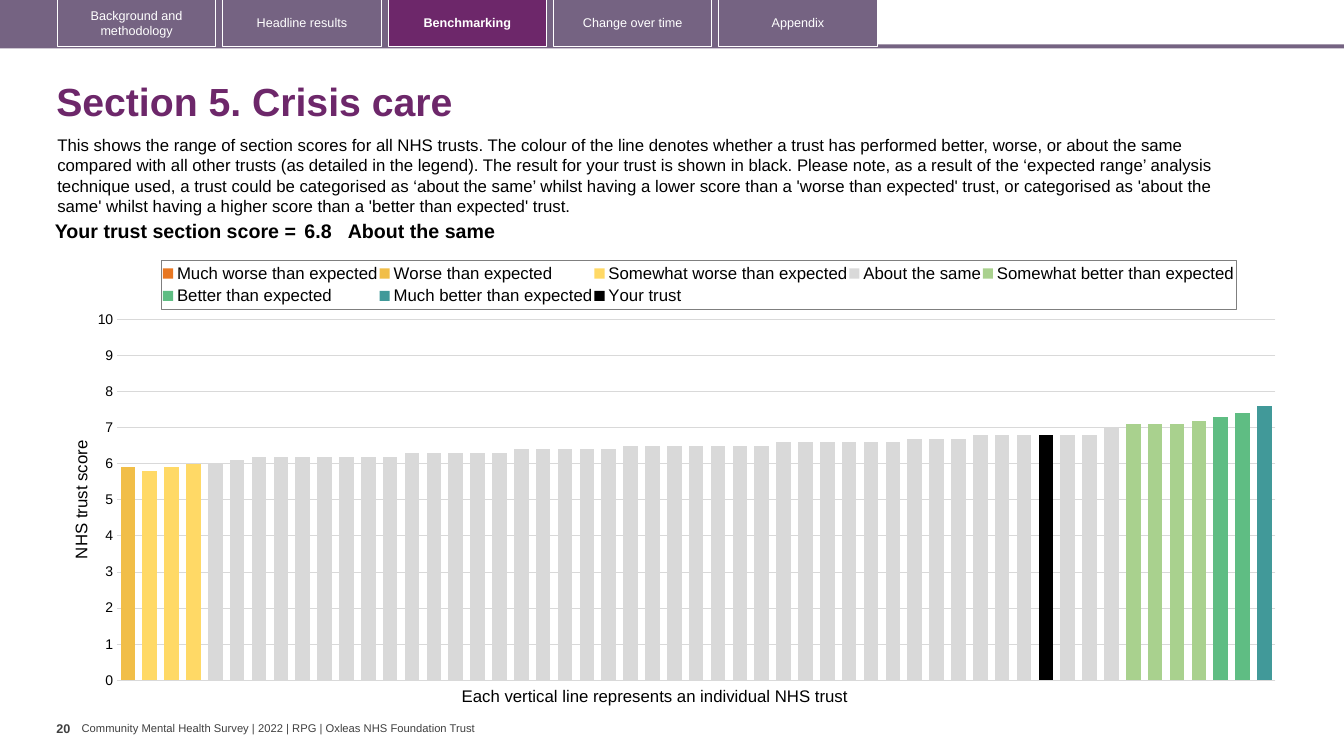
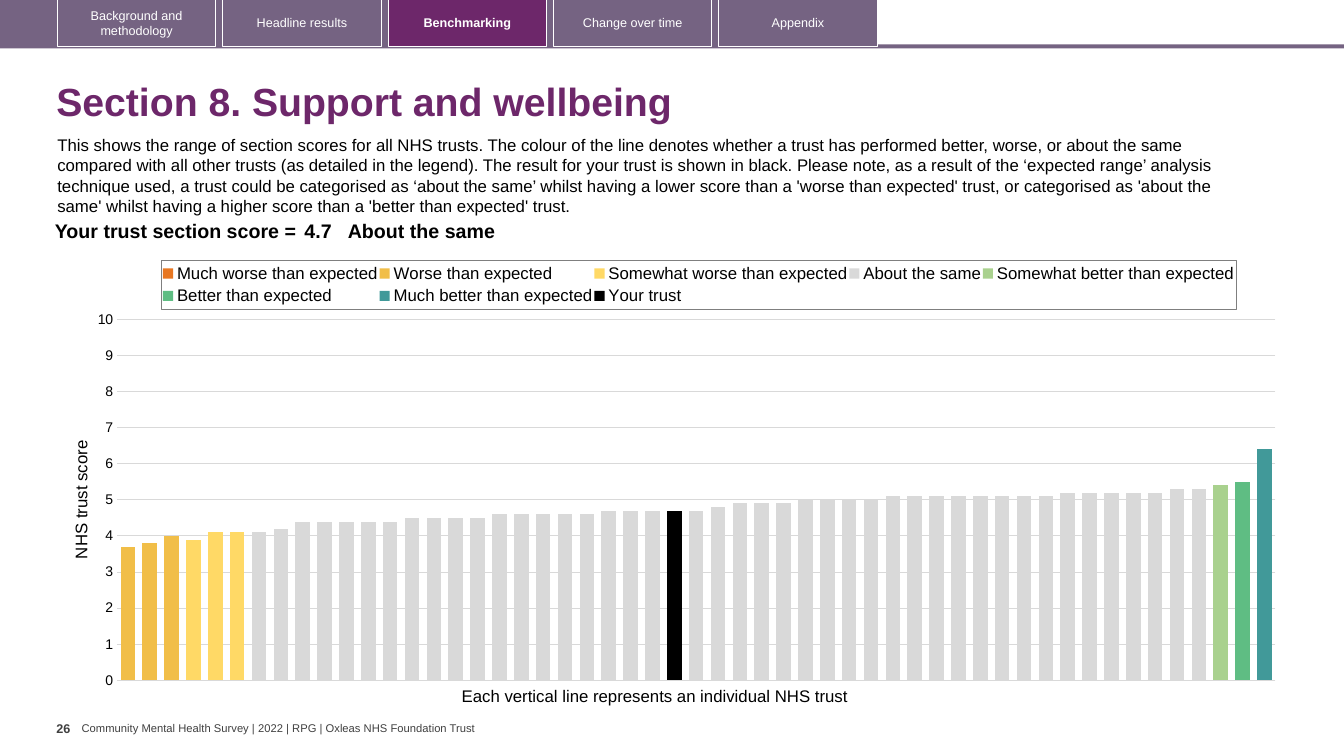
from copy import deepcopy
from dataclasses import dataclass
from typing import Any, NamedTuple, Optional

from pptx import Presentation
from pptx.chart.data import CategoryChartData
from pptx.dml.color import RGBColor
from pptx.enum.chart import XL_CHART_TYPE as ChartType
from pptx.enum.chart import XL_LEGEND_POSITION as LegendPosition
from pptx.enum.chart import XL_TICK_MARK as TickMark
from pptx.enum.shapes import MSO_SHAPE as Preset
from pptx.enum.text import MSO_ANCHOR as Anchor
from pptx.enum.text import PP_ALIGN as Align
from pptx.oxml import parse_xml
from pptx.oxml.ns import nsdecls, qn
from pptx.util import Inches, Pt

PURPLE = RGBColor(0x6D, 0x27, 0x6A)
MAUVE = RGBColor(0x75, 0x63, 0x82)
WHITE = RGBColor(0xFF, 0xFF, 0xFF)
BLACK = RGBColor(0x00, 0x00, 0x00)
CHARCOAL = RGBColor(0x40, 0x40, 0x40)
MID_GREY = RGBColor(0x7F, 0x7F, 0x7F)
LIGHT_GREY = RGBColor(0xD9, 0xD9, 0xD9)
ORANGE = RGBColor(0xE8, 0x77, 0x22)
AMBER = RGBColor(0xF1, 0xBE, 0x48)
YELLOW = RGBColor(0xFF, 0xD9, 0x66)
PALE_GREEN = RGBColor(0xA9, 0xD1, 0x8E)
GREEN = RGBColor(0x5F, 0xBD, 0x83)
TEAL = RGBColor(0x41, 0x99, 0x99)

TITLE_FORMAT = {"name": "Arial", "size": Pt(28), "bold": True}
SCORE_FORMAT = {"name": "Arial", "size": Pt(14), "bold": True}
BODY_FORMAT = {"name": "Arial", "size": Pt(12), "bold": False}
TICK_FORMAT = {"name": "Arial", "size": Pt(10)}
TAB_FORMAT = {"name": "Arial", "size": Pt(9), "bold": False}
CURRENT_TAB_FORMAT = {**TAB_FORMAT, "bold": True}
FOOTER_FORMAT = {"name": "Arial", "size": Pt(8)}

TABS = ("Background and methodology", "Headline results", "Benchmarking",
        "Change over time", "Appendix")
CURRENT_TAB = "Benchmarking"
FOOTER = "Community Mental Health Survey | 2022 | RPG | Oxleas NHS Foundation Trust"
EXPLANATION = (
    "This shows the range of section scores for all NHS trusts. The colour of the line "
    "denotes whether a trust has performed better, worse, or about the same compared with "
    "all other trusts (as detailed in the legend). The result for your trust is shown in "
    "black. Please note, as a result of the ‘expected range’ analysis technique used, a "
    "trust could be categorised as ‘about the same’ whilst having a lower score than a "
    "'worse than expected' trust, or categorised as 'about the same' whilst having a higher "
    "score than a 'better than expected' trust."
)
TRUST_COUNT = 53


class Box(NamedTuple):
    left: float
    top: float
    width: float
    height: float

    def lengths(self) -> tuple:
        return tuple(Inches(side) for side in self)


CHART = Box(0.67, 2.47, 12.15, 4.44)
LEGEND = Box(1.6, 2.58, 10.66, 0.49)
PLOT = Box(1.16, 3.17, 11.49, 3.58)
AXIS_TITLE = Box(0.67, 4.34, 0.2, 1.2)


class Rating(NamedTuple):
    name: str
    color: RGBColor


RATINGS = (
    Rating("Much worse than expected", ORANGE),
    Rating("Worse than expected", AMBER),
    Rating("Somewhat worse than expected", YELLOW),
    Rating("About the same", LIGHT_GREY),
    Rating("Somewhat better than expected", PALE_GREEN),
    Rating("Better than expected", GREEN),
    Rating("Much better than expected", TEAL),
)
YOUR_TRUST = Rating("Your trust", BLACK)


@dataclass(frozen=True)
class Section:
    page: int
    title: str
    score: float
    verdict: str
    rank: int
    scores_by_rating: tuple


SECTIONS = (
    Section(20, "Section 5. Crisis care", 6.8, "About the same", 43, (
        (),
        (5.9,),
        (5.8, 5.9, 6),
        (6, 6.1, *[6.2] * 7, *[6.3] * 5, *[6.4] * 5, *[6.5] * 7, *[6.6] * 6,
         *[6.7] * 3, *[6.8] * 6, 7),
        (7.1, 7.1, 7.1, 7.2),
        (7.3, 7.4),
        (7.6,),
    )),
    Section(26, "Section 8. Support and wellbeing", 4.7, "About the same", 26, (
        (),
        (3.7, 3.8, 4),
        (3.9, 4.1, 4.1),
        (4.1, 4.2, *[4.4] * 5, *[4.5] * 4, *[4.6] * 5, *[4.7] * 5, 4.8, *[4.9] * 3,
         *[5] * 4, *[5.1] * 8, *[5.2] * 5, *[5.3] * 2),
        (5.4,),
        (5.5,),
        (6.4,),
    )),
)


def apply_format(target: Any, values: dict) -> None:
    for attribute, value in values.items():
        setattr(target, attribute, value)


def style_font(font: Any, values: dict, color: RGBColor) -> None:
    apply_format(font, values)
    font.color.rgb = color


def write(frame: Any, text: str, values: dict, color: RGBColor,
          align: Align = Align.LEFT) -> None:
    paragraph = frame.paragraphs[0]
    paragraph.alignment = align
    run = paragraph.add_run()
    run.text = text
    style_font(run.font, values, color)


def add_label(slide: Any, box: Box, text: str, values: dict, color: RGBColor,
              anchor: Anchor = Anchor.TOP, inset: tuple = (0.1, 0.05)) -> Any:
    frame = slide.shapes.add_textbox(*box.lengths()).text_frame
    across, down = (Inches(margin) for margin in inset)
    apply_format(frame, {
        "word_wrap": True, "vertical_anchor": anchor, "margin_left": across,
        "margin_right": across, "margin_top": down, "margin_bottom": down})
    write(frame, text, values, color)
    return frame


def add_band(slide: Any, box: Box, fill: Optional[RGBColor],
             outline: Optional[RGBColor] = None) -> Any:
    band = slide.shapes.add_shape(Preset.RECTANGLE, *box.lengths())
    band.shadow.inherit = False
    for part, color in ((band.fill, fill), (band.line.fill, outline)):
        if color is None:
            part.background()
        else:
            part.solid()
            part.fore_color.rgb = color
    if outline is not None:
        band.line.width = Pt(0.75)
    return band


def add_navigation(slide: Any) -> None:
    add_band(slide, Box(-0.03, 0.44, 13.36, 0.04), MAUVE)
    add_band(slide, Box(-0.03, 0, 8.73, 0.47), MAUVE)
    for position, name in enumerate(TABS):
        current = name == CURRENT_TAB
        tab = add_band(slide, Box(0.57 + 1.64 * position, -0.01, 1.57, 0.47),
                       PURPLE if current else None, WHITE)
        tab.text_frame.word_wrap = True
        tab.text_frame.vertical_anchor = Anchor.MIDDLE
        write(tab.text_frame, name, CURRENT_TAB_FORMAT if current else TAB_FORMAT,
              WHITE, Align.CENTER)


def add_score_row(slide: Any, section: Section) -> None:
    table = slide.shapes.add_table(1, 3, *Box(0.35, 2.15, 11.69, 0.31).lengths()).table
    apply_format(table, {"first_row": False, "horz_banding": False})
    columns = (
        (2.63, "Your trust section score =", Align.RIGHT, 0.04),
        (0.47, f"{section.score}", Align.LEFT, 0.04),
        (8.59, section.verdict, Align.LEFT, 0),
    )
    for column, (width, text, align, margin) in enumerate(columns):
        table.columns[column].width = Inches(width)
        cell = table.cell(0, column)
        cell.fill.background()
        apply_format(cell, {
            "margin_left": Inches(margin), "margin_right": Inches(margin),
            "margin_top": Inches(0.04), "margin_bottom": Inches(0.04)})
        write(cell.text_frame, text, SCORE_FORMAT, BLACK, align)


def set_layout(parent: Any, index: int, box: Box, target: str = "") -> None:
    for old in parent.findall(qn("c:layout")):
        parent.remove(old)
    fractions = {
        "x": (box.left - CHART.left) / CHART.width,
        "y": (box.top - CHART.top) / CHART.height,
        "w": box.width / CHART.width,
        "h": box.height / CHART.height,
    }
    inner = f'<c:layoutTarget val="{target}"/>' if target else ""
    sides = "".join(f'<c:{side} val="{value:.4f}"/>' for side, value in fractions.items())
    parent.insert(index, parse_xml(
        f'<c:layout {nsdecls("c")}><c:manualLayout>{inner}<c:xMode val="edge"/>'
        f'<c:yMode val="edge"/>{sides}</c:manualLayout></c:layout>'))


def move_last_series_to_right_axis(chart: Any) -> None:
    plot_area = chart.element.xpath(".//c:plotArea")[0]
    for tag in ("c:barChart", "c:catAx", "c:valAx"):
        left = plot_area.find(qn(tag))
        right = deepcopy(left)
        left.addnext(right)
        for reference in right.xpath("./c:axId | ./c:crossAx"):
            reference.set("val", reference.get("val").lstrip("-"))
        if tag == "c:barChart":
            left.remove(left.findall(qn("c:ser"))[-1])
            for series in right.findall(qn("c:ser"))[:-1]:
                right.remove(series)
        elif tag == "c:valAx":
            right.remove(right.find(qn("c:majorGridlines")))
            right.find(qn("c:tickLblPos")).set("val", "none")
            right.find(qn("c:crosses")).set("val", "max")


def section_data(section: Section) -> CategoryChartData:
    data = CategoryChartData(number_format="0.0")
    data.categories = [str(rank) for rank in range(1, TRUST_COUNT + 1)]
    start = 0
    for rating, scores in zip(RATINGS, section.scores_by_rating):
        end = start + len(scores)
        data.add_series(rating.name,
                        [None] * start + list(scores) + [None] * (TRUST_COUNT - end))
        start = end
    data.add_series(YOUR_TRUST.name, [
        section.score if rank == section.rank else None
        for rank in range(1, TRUST_COUNT + 1)])
    return data


def add_benchmark_chart(slide: Any, section: Section) -> None:
    chart = slide.shapes.add_chart(
        ChartType.COLUMN_CLUSTERED, *CHART.lengths(), section_data(section)).chart
    style_font(chart.font, {"name": "Calibri", "size": Pt(10)}, BLACK)
    chart.has_title = False
    columns = chart.plots[0]
    apply_format(columns, {"gap_width": 50, "overlap": 100, "vary_by_categories": False})
    for series, rating in zip(columns.series, (*RATINGS, YOUR_TRUST)):
        series.invert_if_negative = False
        series.format.fill.solid()
        series.format.fill.fore_color.rgb = rating.color

    chart.category_axis.visible = False
    scale = chart.value_axis
    apply_format(scale, {"minimum_scale": 0, "maximum_scale": 10, "major_unit": 1,
                         "major_tick_mark": TickMark.NONE})
    scale.format.line.fill.background()
    gridline = scale.major_gridlines.format.line
    gridline.color.rgb = LIGHT_GREY
    gridline.width = Pt(0.75)
    apply_format(scale.tick_labels, {"number_format": "0", "number_format_is_linked": False})
    style_font(scale.tick_labels.font, TICK_FORMAT, BLACK)
    move_last_series_to_right_axis(chart)

    write(scale.axis_title.text_frame, "NHS trust score", BODY_FORMAT, BLACK, Align.CENTER)
    axis_title = chart.element.xpath(".//c:valAx/c:title")[0]
    axis_title.xpath(".//a:bodyPr")[0].set("rot", "-5400000")
    set_layout(axis_title, 1, AXIS_TITLE)

    chart.has_legend = True
    apply_format(chart.legend, {"position": LegendPosition.TOP, "include_in_layout": False})
    style_font(chart.legend.font, BODY_FORMAT, BLACK)
    legend = chart.element.xpath(".//c:legend")[0]
    set_layout(legend, 1, LEGEND)
    legend.find(qn("c:txPr")).addprevious(parse_xml(
        f'<c:spPr {nsdecls("c", "a")}><a:ln w="9525"><a:solidFill>'
        f'<a:srgbClr val="{MID_GREY}"/></a:solidFill></a:ln></c:spPr>'))
    set_layout(chart.element.xpath(".//c:plotArea")[0], 0, PLOT, "inner")


def add_section_slide(deck: Any, section: Section) -> None:
    slide = deck.slides.add_slide(deck.slide_layouts[6])
    add_label(slide, Box(0.81, 7.16, 3.96, 0.13), FOOTER, FOOTER_FORMAT, CHARCOAL,
              Anchor.MIDDLE, (0, 0))
    add_navigation(slide)
    title = add_label(slide, Box(0.46, 0.67, 12.49, 0.72), section.title, TITLE_FORMAT,
                      PURPLE, Anchor.MIDDLE)
    title.paragraphs[0].line_spacing = 0.9
    add_label(slide, Box(0.56, 7.1, 0.25, 0.4), str(section.page), CURRENT_TAB_FORMAT,
              CHARCOAL, inset=(0, 0.05))
    add_label(slide, Box(0.47, 1.29, 12.13, 0.91), EXPLANATION, BODY_FORMAT, BLACK)
    add_label(slide, Box(4.48, 6.75, 4.11, 0.3),
              "Each vertical line represents an individual NHS trust", BODY_FORMAT, BLACK)
    add_benchmark_chart(slide, section)
    add_score_row(slide, section)


def main() -> None:
    deck = Presentation()
    apply_format(deck, {"slide_width": Inches(13.33), "slide_height": Inches(7.5)})
    for section in SECTIONS:
        add_section_slide(deck, section)
    deck.save("out.pptx")


if __name__ == "__main__":
    main()
